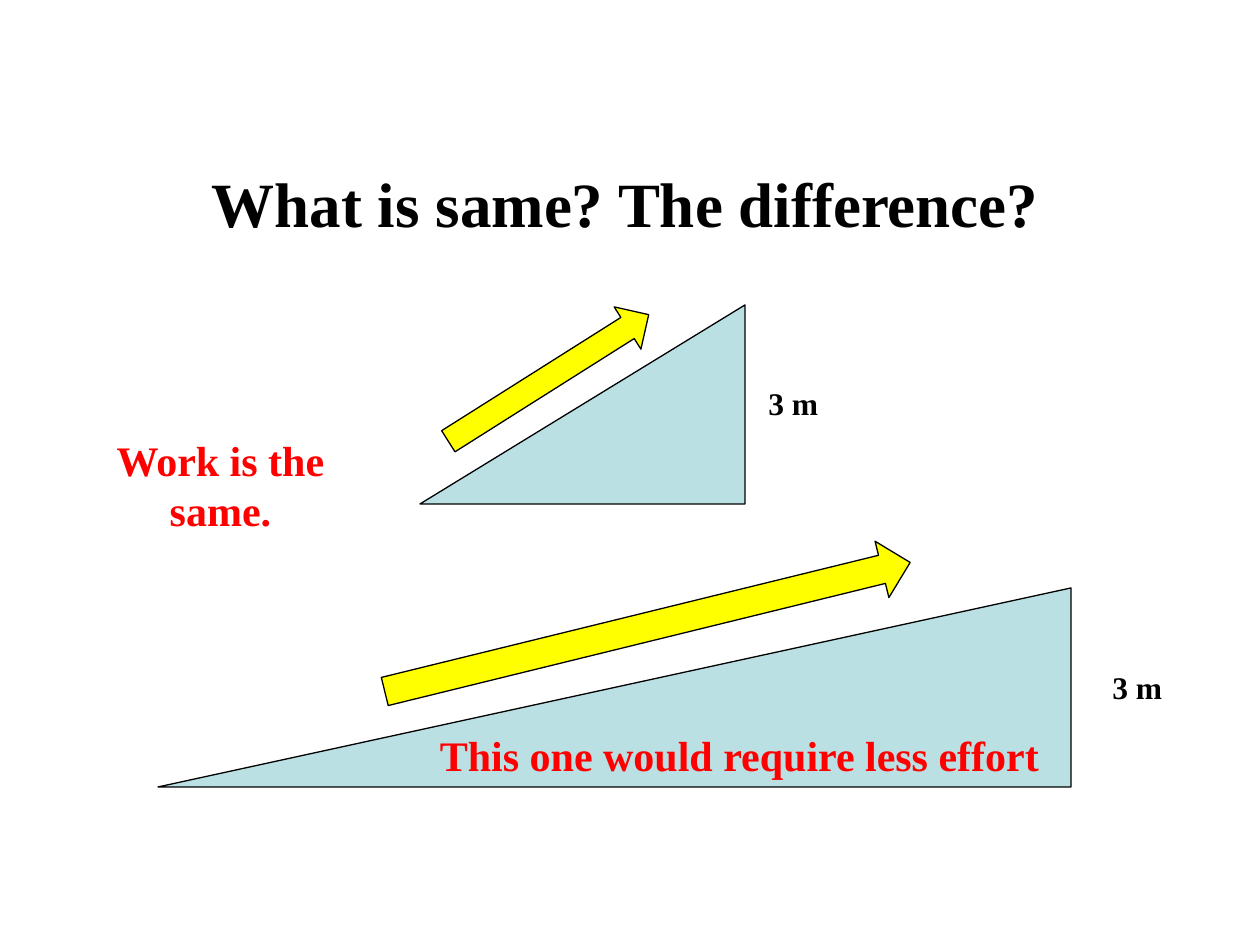
import pptx
import pptx.dml.color
import pptx.enum.shapes
import pptx.enum.text
import pptx.util

BLACK = pptx.dml.color.RGBColor(0x00, 0x00, 0x00)
RED = pptx.dml.color.RGBColor(0xFF, 0x00, 0x00)
YELLOW = pptx.dml.color.RGBColor(0xFF, 0xFF, 0x00)
PALE_BLUE = pptx.dml.color.RGBColor(0xBB, 0xE0, 0xE3)
FONT = "Times New Roman"
ALIGN = pptx.enum.text.PP_ALIGN
SHAPE = pptx.enum.shapes.MSO_SHAPE
PIXELS_PER_INCH = 126


def px(length):
    return pptx.util.Emu(round(length * 914400 / PIXELS_PER_INCH))


def write_text(frame, text, size=18, color=BLACK, align=ALIGN.LEFT, wrap=False):
    frame.word_wrap = wrap
    frame.auto_size = pptx.enum.text.MSO_AUTO_SIZE.SHAPE_TO_FIT_TEXT
    frame.vertical_anchor = pptx.enum.text.MSO_ANCHOR.TOP
    paragraph = frame.paragraphs[0]
    paragraph.alignment = align
    run = paragraph.add_run()
    run.text = text
    run.font.name = FONT
    run.font.size = pptx.util.Pt(size)
    run.font.bold = True
    run.font.color.rgb = color


class SlideBuilder:
    """Draws the slide's elements in one shared style."""

    def __init__(self, slide):
        self.slide = slide

    def title(self, text, left, top, width, height):
        title = self.slide.shapes.title
        title.left, title.top = px(left), px(top)
        title.width, title.height = px(width), px(height)
        write_text(title.text_frame, text, size=36)

    def label(self, text, left, top, width, height, **text_format):
        box = self.slide.shapes.add_textbox(px(left), px(top), px(width), px(height))
        write_text(box.text_frame, text, **text_format)

    def outlined_shape(self, kind, left, top, width, height, fill):
        shape = self.slide.shapes.add_shape(kind, px(left), px(top), px(width), px(height))
        shape.shadow.inherit = False
        shape.fill.solid()
        shape.fill.fore_color.rgb = fill
        shape.line.color.rgb = BLACK
        shape.line.width = pptx.util.Pt(0.75)
        return shape

    def ramp(self, left, top, width, height):
        ramp = self.outlined_shape(
            SHAPE.ISOSCELES_TRIANGLE, left, top, width, height, PALE_BLUE)
        ramp.adjustments[0] = 1

    def arrow(self, left, top, width, height, rotation):
        arrow = self.outlined_shape(
            SHAPE.RIGHT_ARROW, left, top, width, height, YELLOW)
        arrow.rotation = rotation


def main():
    presentation = pptx.Presentation()
    presentation.slide_width = px(1260)
    presentation.slide_height = px(945)
    slide = presentation.slides.add_slide(presentation.slide_layouts[5])
    builder = SlideBuilder(slide)
    answer = {"size": 24, "color": RED, "align": ALIGN.CENTER, "wrap": True}

    builder.title("What is same? The difference?", 199, 158, 861, 89)
    builder.ramp(158, 588, 913, 199)
    builder.ramp(420, 305, 325, 199)
    for left, top in ((756, 378), (1100, 662)):
        builder.label("3 m", left, top, 76, 50)
    builder.label("This one would require less effort", 410, 723, 659, 64, **answer)
    builder.arrow(430, 353, 237, 50, 327.7)
    builder.arrow(377, 598, 541, 58, 346.2)
    builder.label("Work is the same.", 102, 428, 237, 115, **answer)
    presentation.save("out.pptx")


if __name__ == "__main__":
    main()
